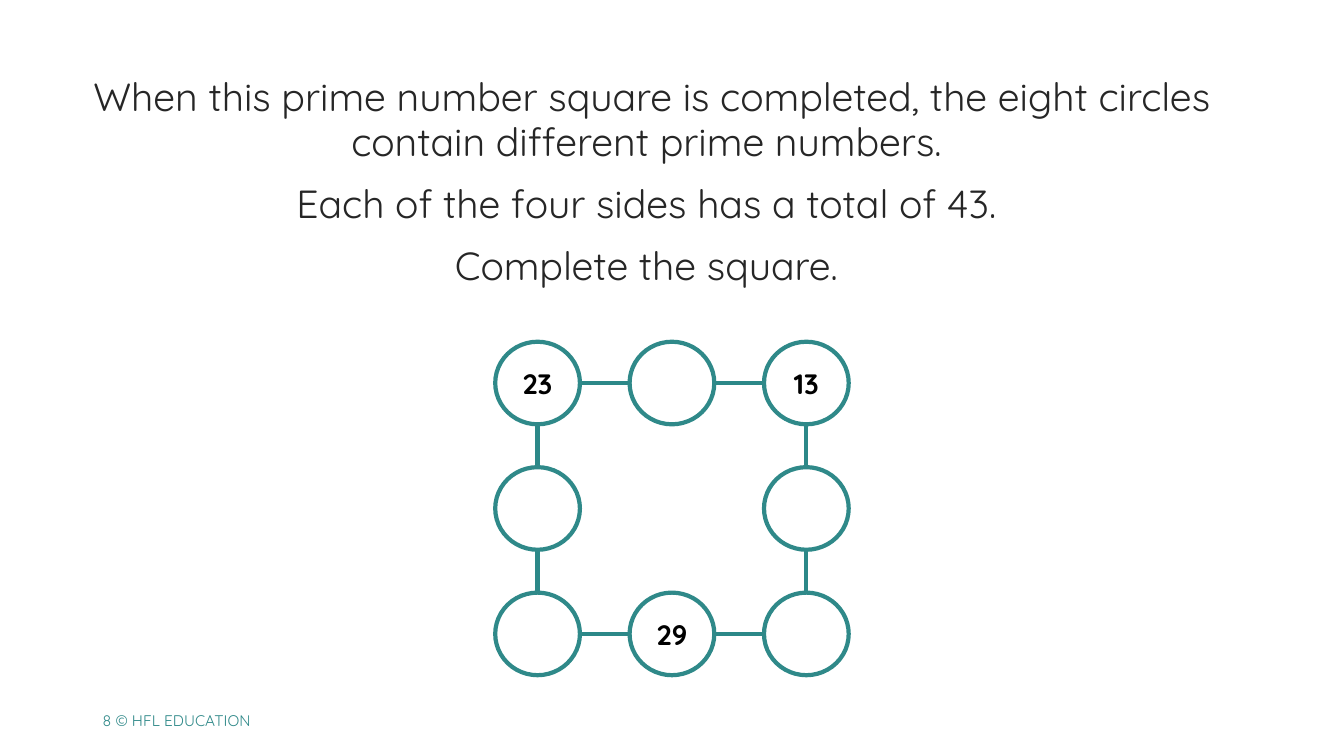
from dataclasses import dataclass
from lxml import etree
from pptx import Presentation
from pptx.dml.color import RGBColor
from pptx.enum.shapes import MSO_CONNECTOR, MSO_SHAPE
from pptx.enum.text import MSO_ANCHOR, MSO_AUTO_SIZE, PP_ALIGN
from pptx.oxml.ns import qn
from pptx.util import Pt

CENTER, LEFT = PP_ALIGN.CENTER, PP_ALIGN.LEFT
TOP, MIDDLE = MSO_ANCHOR.TOP, MSO_ANCHOR.MIDDLE
NO_AUTOFIT = MSO_AUTO_SIZE.NONE
OVAL, STRAIGHT = MSO_SHAPE.OVAL, MSO_CONNECTOR.STRAIGHT

# Content
PROBLEM = [
    "When this prime number square is completed, the eight circles contain different prime numbers. ",
    "Each of the four sides has a total of 43. ",
    "Complete the square. ",
]
# Rows of the number square; None marks the open centre
NUMBER_SQUARE = [
    ["23", "", "13"],
    ["", None, ""],
    ["", "29", ""],
]
FOOTER = "8 © HFL EDUCATION"


@dataclass(frozen=True)
class Theme:
    font: str = "Quicksand"
    ink: RGBColor = RGBColor(0x26, 0x26, 0x26)
    number: RGBColor = RGBColor(0, 0, 0)
    teal: RGBColor = RGBColor(0x2F, 0x89, 0x89)
    side: RGBColor = RGBColor(0x2C, 0x88, 0x88)
    white: RGBColor = RGBColor(0xFF, 0xFF, 0xFF)
    problem_size: int = 28
    number_size: int = 20
    footer_size: int = 11
    stroke: int = 3


THEME = Theme()

# Layout, in points
SLIDE_W, SLIDE_H = 960, 540
PROBLEM_BOX = (52.6, 50, 825.8, 394)
FOOTER_BOX = (66.2, 500.4, 198, 28.8)
SQUARE_X, SQUARE_Y = 384, 273.6  # centre of the top left circle
PITCH_X, PITCH_Y = 96, 89.6
CIRCLE_W, CIRCLE_H = 60.5, 59


def write(frame, lines, size, color, align, anchor, bold=False):
    frame.word_wrap = True
    frame.auto_size = NO_AUTOFIT
    frame.vertical_anchor = anchor
    frame.text = "\n".join(lines)
    for paragraph in frame.paragraphs:
        paragraph.alignment = align
        paragraph.font.name = THEME.font
        paragraph.font.size = Pt(size)
        paragraph.font.bold = bold
        paragraph.font.color.rgb = color


def center(row, column):
    return SQUARE_X + column * PITCH_X, SQUARE_Y + row * PITCH_Y


def add_side(shapes, start, end):
    side = shapes.add_connector(STRAIGHT, *(Pt(v) for v in start + end))
    side.line.color.rgb = THEME.side
    side.line.width = Pt(THEME.stroke)
    etree.SubElement(side._element.spPr, qn("a:effectLst"))


def add_circle(shapes, middle, number):
    x, y = middle
    circle = shapes.add_shape(OVAL, Pt(x - CIRCLE_W / 2), Pt(y - CIRCLE_H / 2),
                              Pt(CIRCLE_W), Pt(CIRCLE_H))
    circle.shadow.inherit = False
    circle.fill.solid()
    circle.fill.fore_color.rgb = THEME.white
    circle.line.color.rgb = THEME.teal
    circle.line.width = Pt(THEME.stroke)
    if number:
        write(circle.text_frame, [number], THEME.number_size, THEME.number,
              CENTER, MIDDLE, bold=True)


def main():
    prs = Presentation()
    prs.slide_width, prs.slide_height = Pt(SLIDE_W), Pt(SLIDE_H)
    slide = prs.slides.add_slide(prs.slide_layouts[5])
    shapes = slide.shapes

    # Problem statement
    problem = shapes.title
    problem.left, problem.top, problem.width, problem.height = map(Pt, PROBLEM_BOX)
    write(problem.text_frame, PROBLEM, THEME.problem_size, THEME.ink, CENTER, TOP)
    for paragraph in problem.text_frame.paragraphs:
        paragraph.line_spacing = 0.96
        paragraph.space_before = Pt(0)
        paragraph.space_after = Pt(12)

    # Sides of the square, behind the circles
    corners = [center(0, 0), center(0, 2), center(2, 2), center(2, 0)]
    for start, end in zip(corners, corners[1:] + corners[:1]):
        add_side(shapes, start, end)

    # Circles
    for row, numbers in enumerate(NUMBER_SQUARE):
        for column, number in enumerate(numbers):
            if number is not None:
                add_circle(shapes, center(row, column), number)

    # Footer
    footer = shapes.add_textbox(*map(Pt, FOOTER_BOX))
    write(footer.text_frame, [FOOTER], THEME.footer_size, THEME.teal, LEFT, MIDDLE)

    prs.save("out.pptx")


if __name__ == "__main__":
    main()
